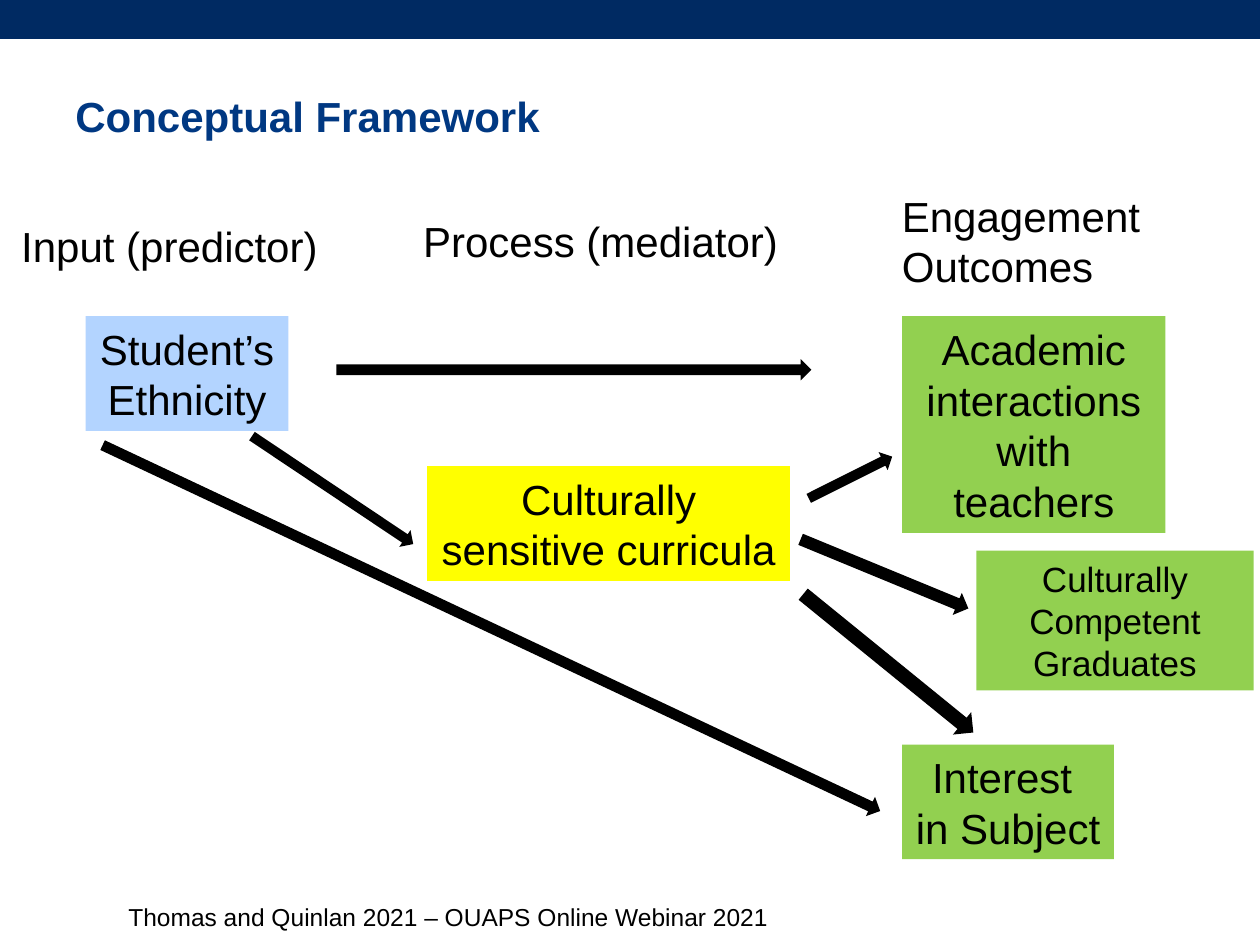
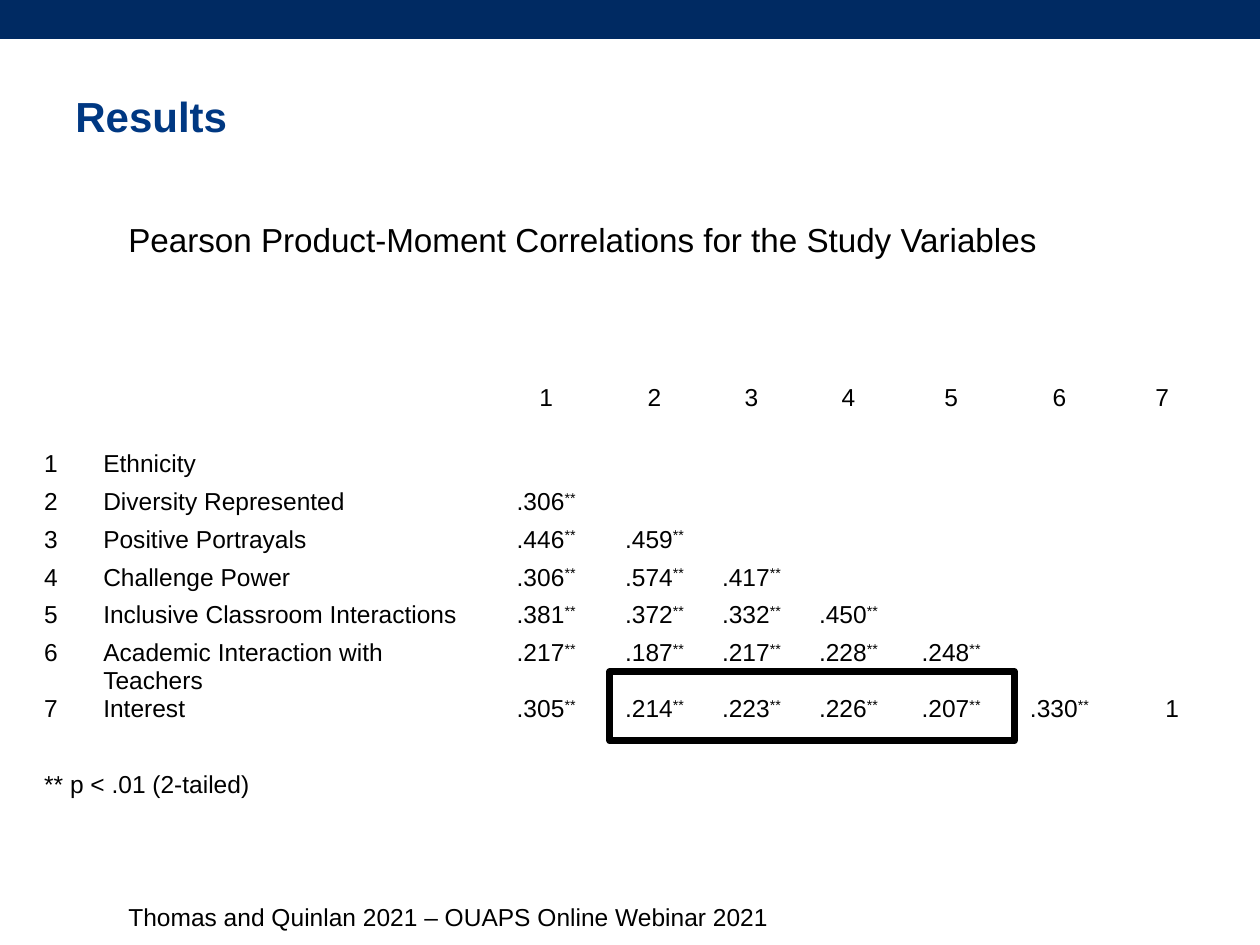
from collections import namedtuple

from pptx import Presentation
from pptx.dml.color import RGBColor
from pptx.enum.shapes import MSO_SHAPE
from pptx.enum.text import MSO_ANCHOR, PP_ALIGN
from pptx.util import Inches, Pt

COLORS = {
    "band": "002A62", "title": "003882", "text": "000000", "white": "FFFFFF",
    "input": "B3D4FF", "process": "FFFF00", "outcome": "92D050",
}
FONT = "Arial"
FOOTER = "Thomas and Quinlan 2021 – OUAPS Online Webinar 2021"
Box = namedtuple("Box", "left top width height")

HEADINGS = [
    ("Input (predictor)", Box(0.07, 0.24, 2.58, 0.5), False),
    ("Process (mediator)", Box(3.26, 0.2, 3.05, 0.5), False),
    ("Engagement Outcomes", Box(7.06, 0, 2.27, 0.91), True),
]
CONCEPTS = [
    (["Student’s Ethnicity"], "input", Box(0.68, 1.05, 1.61, 0.91), 24),
    (["Culturally sensitive curricula"], "process", Box(3.39, 2.24, 2.88, 0.91), 24),
    (["Academic interactions with teachers"], "outcome", Box(7.16, 1.05, 2.09, 1.72), 24),
    (["Culturally Competent Graduates"], "outcome", Box(7.75, 2.91, 2.2, 1.11), 20),
    (["Interest ", "in Subject"], "outcome", Box(7.16, 4.45, 1.68, 0.91), 24),
]
ARROWS = [
    (Box(2.67, 1.39, 3.77, 0.17), 0),
    (Box(0.49, 3.44, 6.82, 0.17), 25.2),
    (Box(6.38, 2.25, 0.74, 0.16), 333.4),
    (Box(6.18, 3.69, 1.74, 0.23), 39.1),
    (Box(1.87, 2.35, 1.54, 0.16), 33.8),
    (Box(6.3, 3, 1.44, 0.19), 22.4),
]
VARIABLES = [
    ("Ethnicity", []),
    ("Diversity Represented", [".306"]),
    ("Positive Portrayals", [".446", ".459"]),
    ("Challenge Power", [".306", ".574", ".417"]),
    ("Inclusive Classroom Interactions", [".381", ".372", ".332", ".450"]),
    ("Academic Interaction with Teachers", [".217", ".187", ".217", ".228", ".248"]),
    ("Interest", [".305", ".214", ".223", ".226", ".207", ".330"]),
]
COLUMN_WIDTHS = [0.47, 3.06, 0.95, 0.77, 0.77, 0.77, 0.86, 0.86, 0.77]
HEADER_HEIGHT, ROW_HEIGHT = 0.42, 0.3


def color(name):
    """Return the named palette colour."""
    return RGBColor.from_string(COLORS[name])


def within(area, part):
    """Return the part's box moved to the area's origin."""
    return part._replace(left=area.left + part.left, top=area.top + part.top)


def lengths(box):
    """Return a box's four measures as lengths."""
    return [Inches(value) for value in box]


def style_paragraph(para, size, shade="text", bold=False):
    """Set the font of a whole paragraph."""
    para.font.name = FONT
    para.font.size = Pt(size)
    para.font.bold = bold
    para.font.color.rgb = color(shade)


def add_text(page, box, text, size, shade="text", bold=False, wrap=True,
             anchor=MSO_ANCHOR.TOP):
    """Add a one-paragraph text box."""
    frame = page.shapes.add_textbox(*lengths(box)).text_frame
    frame.word_wrap = wrap
    frame.vertical_anchor = anchor
    frame.text = text
    style_paragraph(frame.paragraphs[0], size, shade, bold)


def add_plain_shape(page, kind, box, fill):
    """Add a flat filled shape without an outline."""
    shape = page.shapes.add_shape(kind, *lengths(box))
    shape.shadow.inherit = False
    shape.fill.solid()
    shape.fill.fore_color.rgb = color(fill)
    shape.line.fill.background()
    return shape


def add_concept(page, box, lines, fill, size):
    """Add a coloured box holding centred lines."""
    shape = add_plain_shape(page, MSO_SHAPE.RECTANGLE, box, fill)
    frame = shape.text_frame
    frame.word_wrap = len(lines) == 1
    frame.text = "\n".join(lines)
    for para in frame.paragraphs:
        para.alignment = PP_ALIGN.CENTER
        style_paragraph(para, size)


def add_page(deck, title):
    """Add a page with the top band, title and footer."""
    page = deck.slides.add_slide(deck.slide_layouts[6])
    add_plain_shape(page, MSO_SHAPE.RECTANGLE, Box(0, 0, 10, 0.31), "band")
    add_text(page, Box(0.5, 0.6, 9.07, 0.63), title, 24, "title", True,
             anchor=MSO_ANCHOR.MIDDLE)
    add_text(page, Box(0.92, 7.11, 6.62, 0.3), FOOTER, 14)
    return page


def add_framework(page, area):
    """Draw the input, process and outcome diagram."""
    for text, box, wrap in HEADINGS:
        add_text(page, within(area, box), text, 24, wrap=wrap)
    for lines, fill, box, size in CONCEPTS:
        add_concept(page, within(area, box), lines, fill, size)
    for box, angle in ARROWS:
        arrow = add_plain_shape(page, MSO_SHAPE.RIGHT_ARROW, within(area, box), "text")
        arrow.rotation = angle


def fill_cell(cell, text="", centered=False, starred=False, indent=0.04):
    """Write one table cell, with significance stars if asked."""
    para = cell.text_frame.paragraphs[0]
    para.line_spacing = Pt(16)
    para.alignment = PP_ALIGN.CENTER if centered else PP_ALIGN.LEFT
    para._p.get_or_add_pPr().set("marL", str(Inches(indent)))
    if text:
        para.add_run().text = text
    if starred:
        stars = para.add_run()
        stars.text = "**"
        stars.font._element.set("baseline", "30000")
    style_paragraph(para, 14)


def add_correlations(page, area):
    """Add the correlation table and the frame around its key values."""
    row_count, column_count = len(VARIABLES) + 4, len(COLUMN_WIDTHS)
    table = page.shapes.add_table(row_count, column_count, *lengths(area)).table
    table.first_row = table.horz_banding = False
    for column, width in zip(table.columns, COLUMN_WIDTHS):
        column.width = Inches(width)
    for index, row in enumerate(table.rows):
        row.height = Inches(ROW_HEIGHT if index else HEADER_HEIGHT)
    for cell in table.iter_cells():
        cell.margin_left = cell.margin_right = cell.margin_top = cell.margin_bottom = 0
        cell.fill.solid()
        cell.fill.fore_color.rgb = color("white")
        cell.text_frame.paragraphs[0].line_spacing = Pt(16)

    for number, (name, values) in enumerate(VARIABLES, 1):
        header = table.cell(0, number + 1)
        header.vertical_anchor = MSO_ANCHOR.BOTTOM
        fill_cell(header, str(number), centered=True)
        row = number + 1
        fill_cell(table.cell(row, 0), str(number))
        fill_cell(table.cell(row, 1), name)
        for column, value in enumerate(values, 2):
            fill_cell(table.cell(row, column), value, centered=True, starred=True)
    fill_cell(table.cell(len(VARIABLES) + 1, column_count - 1), "1",
              centered=True, indent=0.2)

    for row in (row_count - 2, row_count - 1):
        table.cell(row, 0).merge(table.cell(row, column_count - 1))
    fill_cell(table.cell(row_count - 1, 0), "** p < .01 (2-tailed)")

    highlight = add_plain_shape(page, MSO_SHAPE.RECTANGLE,
                                within(area, Box(4.53, 2.48, 3.21, 0.55)), "white")
    highlight.fill.background()
    highlight.line.color.rgb = color("text")
    highlight.line.width = Pt(4)


def main():
    """Build and save the deck."""
    deck = Presentation()
    deck.slide_width, deck.slide_height = Inches(10), Inches(7.5)
    add_framework(add_page(deck, "Conceptual Framework"), Box(0, 1.46, 10, 5.4))
    results = add_page(deck, "Results")
    add_text(results, Box(0.92, 1.69, 8.18, 0.42),
             "Pearson Product-Moment Correlations for the Study Variables", 19)
    add_correlations(results, Box(0.31, 2.85, 9.28, 3.42))
    deck.save("out.pptx")


if __name__ == "__main__":
    main()
